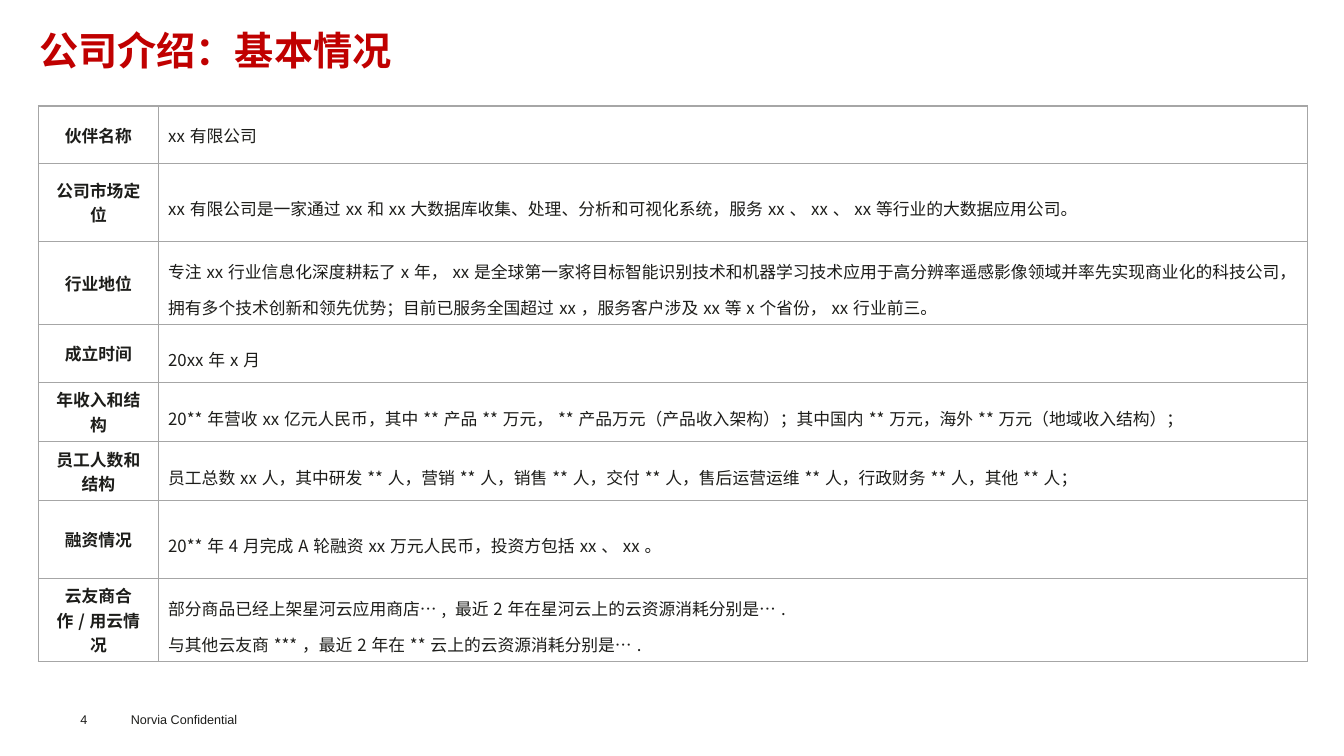
import lxml.etree
import pptx
import pptx.dml.color
import pptx.enum.text
import pptx.oxml.ns
import pptx.util

Cm, Pt = pptx.util.Cm, pptx.util.Pt
ALIGN = pptx.enum.text.PP_ALIGN
MIDDLE = pptx.enum.text.MSO_ANCHOR.MIDDLE
CHINESE_FONT = "Noto Sans CJK SC"
TEXT, RED, BORDER = "1D1D1A", "C00000", "A6A6A6"
COLUMN_WIDTHS = (3.02, 28.98)
LOW_ROW, HIGH_ROW = 1.45, 1.96

# Row height, label, line spacing, paragraphs
ROWS = [
    (LOW_ROW, "伙伴名称", 1.0, ["xx有限公司"]),
    (HIGH_ROW, "公司市场定位", 1.5, [
        "xx有限公司是一家通过xx和xx大数据库收集、处理、分析和可视化系统，"
        "服务xx、xx、xx等行业的大数据应用公司。"]),
    (HIGH_ROW, "行业地位", 1.5, [
        "专注xx行业信息化深度耕耘了x年，xx是全球第一家将目标智能识别技术和机器学习技术"
        "应用于高分辨率遥感影像领域并率先实现商业化的科技公司，拥有多个技术创新和领先优势；"
        "目前已服务全国超过xx，服务客户涉及xx等x个省份，xx行业前三。"]),
    (LOW_ROW, "成立时间", 1.5, ["20xx年x月"]),
    (LOW_ROW, "年收入和结构", 1.5, [
        "20**年营收xx亿元人民币，其中**产品**万元，**产品万元（产品收入架构）；"
        "其中国内**万元，海外**万元（地域收入结构）；"]),
    (LOW_ROW, "员工人数和结构", 1.5, [
        "员工总数xx人，其中研发**人，营销**人，销售**人，交付**人，"
        "售后运营运维**人，行政财务**人，其他**人；"]),
    (HIGH_ROW, "融资情况", 1.5, [
        "20**年4月完成A轮融资xx万元人民币，投资方包括xx、xx。"]),
    (HIGH_ROW, "云友商合作/用云情况", 1.5, [
        "部分商品已经上架星河云应用商店…, 最近2年在星河云上的云资源消耗分别是….",
        "与其他云友商***，最近2年在**云上的云资源消耗分别是…."]),
]


def color(value):
    return pptx.dml.color.RGBColor.from_string(value)


def add_run(paragraph, text, size, fill, font=CHINESE_FONT, bold=False):
    run = paragraph.add_run()
    run.text = text
    run.font.size = Pt(size)
    run.font.bold = bold
    run.font.color.rgb = color(fill)
    run.font.name = font
    east_asian = lxml.etree.SubElement(
        run.font._element, pptx.oxml.ns.qn("a:ea"))
    east_asian.set("typeface", font)


def set_margins(frame, margin=0):
    frame.margin_left = frame.margin_right = margin
    frame.margin_top = frame.margin_bottom = margin


def add_title(slide, text):
    title = slide.shapes.title
    title.left, title.top = Cm(0.99), Cm(0)
    title.width, title.height = Cm(32.89), Cm(2.49)
    frame = title.text_frame
    set_margins(frame)
    frame.auto_size = pptx.enum.text.MSO_AUTO_SIZE.NONE
    frame.vertical_anchor = MIDDLE
    paragraph = frame.paragraphs[0]
    paragraph.alignment = ALIGN.LEFT
    paragraph.line_spacing = Pt(34.3)
    add_run(paragraph, text, 28, RED, bold=True)


def add_footer_text(slide, text, left, top, width, height):
    box = slide.shapes.add_textbox(Cm(left), Cm(top), Cm(width), Cm(height))
    frame = box.text_frame
    frame.word_wrap = True
    set_margins(frame)
    add_run(frame.paragraphs[0], text, 9, "1D1D1B", "Arial")


def set_borders(cell):
    properties = cell._tc.get_or_add_tcPr()
    for side in ("a:lnL", "a:lnR", "a:lnT", "a:lnB"):
        line = lxml.etree.SubElement(properties, pptx.oxml.ns.qn(side))
        line.set("w", str(Pt(1)))
        fill = lxml.etree.SubElement(line, pptx.oxml.ns.qn("a:solidFill"))
        lxml.etree.SubElement(
            fill, pptx.oxml.ns.qn("a:srgbClr")).set("val", BORDER)


def fill_cell(cell, paragraphs, alignment, spacing=None, bold=False):
    set_borders(cell)
    cell.fill.background()
    cell.vertical_anchor = MIDDLE
    cell.margin_left = cell.margin_right = Cm(0.25)
    cell.margin_top = cell.margin_bottom = Cm(0.13)
    frame = cell.text_frame
    for index, text in enumerate(paragraphs):
        paragraph = frame.add_paragraph() if index else frame.paragraphs[0]
        paragraph.alignment = alignment
        paragraph.line_spacing = spacing
        add_run(paragraph, text, 12, TEXT, bold=bold)


def add_company_table(slide):
    table = slide.shapes.add_table(
        len(ROWS), len(COLUMN_WIDTHS), Cm(0.97), Cm(2.67),
        Cm(sum(COLUMN_WIDTHS)), Cm(sum(row[0] for row in ROWS))).table
    table.first_row = table.horz_banding = False
    for column, width in zip(table.columns, COLUMN_WIDTHS):
        column.width = Cm(width)
    for row, (height, label, spacing, paragraphs) in zip(table.rows, ROWS):
        row.height = Cm(height)
        label_cell, detail_cell = row.cells
        fill_cell(label_cell, [label], ALIGN.CENTER, bold=True)
        fill_cell(detail_cell, paragraphs, ALIGN.LEFT, spacing)


def main():
    presentation = pptx.Presentation()
    presentation.slide_width, presentation.slide_height = Cm(33.88), Cm(19.05)
    slide = presentation.slides.add_slide(presentation.slide_layouts[5])
    add_title(slide, "公司介绍：基本情况")
    add_company_table(slide)
    add_footer_text(slide, "4", 2.03, 17.93, 1.4, 0.38)
    add_footer_text(slide, "Norvia Confidential", 3.3, 17.93, 3.6, 0.38)
    presentation.save("out.pptx")


if __name__ == "__main__":
    main()
